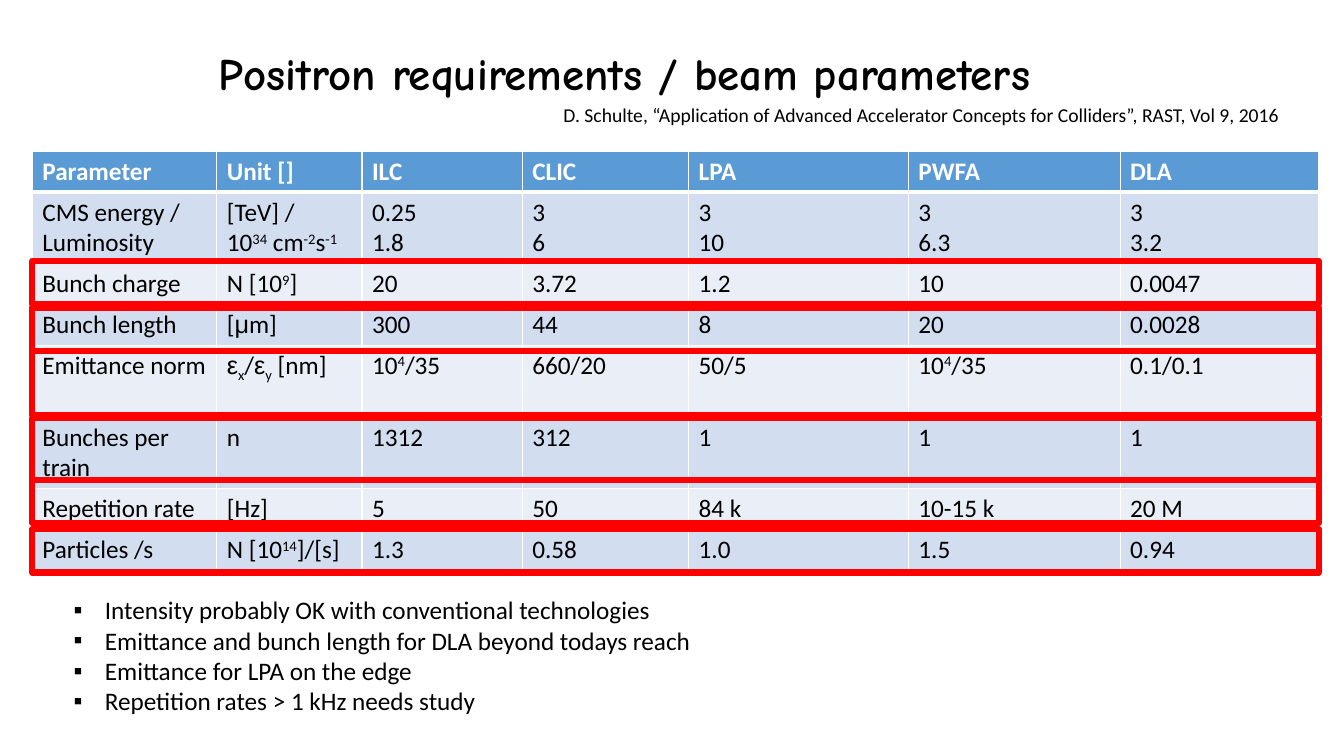
import itertools

import lxml.etree
import pptx
import pptx.dml.color
import pptx.enum.shapes
import pptx.enum.text
import pptx.oxml
import pptx.oxml.ns
import pptx.util

Inches = pptx.util.Inches
Pt = pptx.util.Pt
LEFT, TABLE_TOP, WIDTH = 0.32, 1.5, 12.76

COLUMN_WIDTHS = [1.83, 1.44, 1.59, 1.65, 2.18, 2.1, 1.97]
ROW_HEIGHTS = [0.4, 0.69, 0.4, 0.4, 0.71, 0.71, 0.4, 0.4]
# ^...^ marks superscript, _..._ marks subscript, \n a new paragraph
PARAMETERS = [
    ["Parameter", "Unit []", "ILC", "CLIC", "LPA", "PWFA", "DLA"],
    ["CMS energy /\nLuminosity", "[TeV] /\n10^34^ cm^-2^s^-1^",
     "0.25\n1.8", "3\n6", "3\n10", "3\n6.3", "3\n3.2"],
    ["Bunch charge", "N [10^9^]", "20", "3.72", "1.2", "10", "0.0047"],
    ["Bunch length", "[μm]", "300", "44", "8", "20", "0.0028"],
    ["Emittance norm", "ε_x_/ε_y_ [nm]", "10^4^/35", "660/20", "50/5", "10^4^/35", "0.1/0.1"],
    ["Bunches per train", "n", "1312", "312", "1", "1", "1"],
    ["Repetition rate", "[Hz]", "5", "50", "84 k", "10-15 k", "20 M"],
    ["Particles /s", "N [10^14^]/[s]", "1.3", "0.58", "1.0", "1.5", "0.94"],
]
# Top and height of each red frame
FRAMES = [(2.59, 0.43), (3.05, 0.43), (3.48, 0.64), (4.15, 0.61), (4.76, 0.43), (5.25, 0.43)]
FINDINGS = [
    "Intensity probably OK with conventional technologies",
    "Emittance and bunch length for DLA beyond todays reach",
    "Emittance for LPA on the edge",
    "Repetition rates > 1 kHz needs study",
]


def colour(code):
    return pptx.dml.color.RGBColor.from_string(code)


def apply(target, values):
    for name, value in values.items():
        setattr(target, name, value)


class SlideBuilder:
    BODY = {"name": "Calibri", "size": Pt(18), "bold": False}
    HEADER = {**BODY, "bold": True}
    SMALL = {**BODY, "size": Pt(14)}
    TITLE = {"name": "Comic Neue", "size": Pt(32), "bold": True}
    PARA = {"alignment": pptx.enum.text.PP_ALIGN.LEFT, "line_spacing": 1.0,
            "space_before": Pt(0), "space_after": Pt(0)}
    FRAME = {"word_wrap": True, "auto_size": pptx.enum.text.MSO_AUTO_SIZE.NONE,
             "vertical_anchor": pptx.enum.text.MSO_ANCHOR.TOP}

    def __init__(self, deck):
        self.page = deck.slides.add_slide(deck.slide_layouts[1])

    def add_span(self, para, text, font, ink, baseline=0):
        span = para.add_run()
        span.text = text
        apply(span.font, font)
        span.font.color.rgb = colour(ink)
        if baseline:
            span.font._element.set("baseline", str(baseline))

    def fill_text(self, frame, lines, font, ink="000000"):
        """Fill a text frame, one paragraph per line."""
        for number, line in enumerate(lines):
            para = frame.add_paragraph() if number else frame.paragraphs[0]
            apply(para, self.PARA)
            for raised, chunk in enumerate(line.split("^")):
                for lowered, piece in enumerate(chunk.split("_")):
                    baseline = 30000 if raised % 2 else -25000 if lowered % 2 else 0
                    for greek, letters in itertools.groupby(piece, lambda sign: sign in "με"):
                        face = {**font, "name": "Arial"} if greek else font
                        self.add_span(para, "".join(letters), face, ink, baseline)

    def place(self, box, left, top, width, height):
        apply(box, {"left": Inches(left), "top": Inches(top),
                    "width": Inches(width), "height": Inches(height)})
        apply(box.text_frame, self.FRAME)

    def title(self, text, *area):
        box = self.page.shapes.title
        self.place(box, *area)
        self.fill_text(box.text_frame, [text], self.TITLE)

    def label(self, text, *area):
        box = self.page.shapes.add_textbox(0, 0, 0, 0)
        self.place(box, *area)
        self.fill_text(box.text_frame, [text], self.SMALL)

    def bullets(self, lines, *area):
        box = self.page.placeholders[1]
        self.place(box, *area)
        self.fill_text(box.text_frame, lines, self.BODY)
        for para in box.text_frame.paragraphs:
            settings = para._p.get_or_add_pPr()
            settings.set("marL", str(Inches(0.31)))
            settings.set("indent", str(-Inches(0.31)))
            mark = lxml.etree.SubElement(settings, pptx.oxml.ns.qn("a:buChar"))
            mark.set("char", "▪")

    def border(self, cell, header):
        for side in "LRTB":
            weight = Pt(3 if header and side == "B" else 1)
            cell._tc.get_or_add_tcPr().append(pptx.oxml.parse_xml(
                f'<a:ln{side} {pptx.oxml.ns.nsdecls("a")} w="{weight}">'
                '<a:solidFill><a:srgbClr val="FFFFFF"/></a:solidFill>'
                f'</a:ln{side}>'))

    def table(self, rows, left, top):
        table = self.page.shapes.add_table(
            len(rows), len(COLUMN_WIDTHS), Inches(left), Inches(top),
            Inches(sum(COLUMN_WIDTHS)), Inches(sum(ROW_HEIGHTS))).table
        for column, width in zip(table.columns, COLUMN_WIDTHS):
            column.width = Inches(width)
        for row, height in zip(table.rows, ROW_HEIGHTS):
            row.height = Inches(height)
        for number, texts in enumerate(rows):
            header = number == 0
            shade = "5B9BD5" if header else "D2DEEF" if number % 2 else "EAEFF7"
            for index, text in enumerate(texts):
                cell = table.cell(number, index)
                self.border(cell, header)
                cell.fill.solid()
                cell.fill.fore_color.rgb = colour(shade)
                self.fill_text(cell.text_frame, text.split("\n"),
                               self.HEADER if header else self.BODY,
                               "FFFFFF" if header else "000000")

    def highlight(self, left, top, width, height):
        box = self.page.shapes.add_shape(
            pptx.enum.shapes.MSO_SHAPE.RECTANGLE,
            Inches(left), Inches(top), Inches(width), Inches(height))
        box.shadow.inherit = False
        box.fill.background()
        box.line.color.rgb = colour("FF0000")
        box.line.width = Pt(4.5)


def main():
    deck = pptx.Presentation()
    apply(deck, {"slide_width": Inches(13.33), "slide_height": Inches(7.5)})
    slide = SlideBuilder(deck)

    # Heading and reference
    slide.title("Positron requirements / beam parameters", 2.07, 0.4, 9.25, 0.64)
    slide.label("D. Schulte, “Application of Advanced Accelerator Concepts for Colliders”, "
                "RAST, Vol 9, 2016", 5.49, 0.97, 7.59, 0.34)

    # Parameter table with highlighted rows
    slide.table(PARAMETERS, LEFT, TABLE_TOP)
    for top, height in FRAMES:
        slide.highlight(LEFT, top, WIDTH, height)

    # Findings
    slide.bullets(FINDINGS, 0.63, 5.85, 7.26, 1.31)
    deck.save("out.pptx")


if __name__ == "__main__":
    main()
